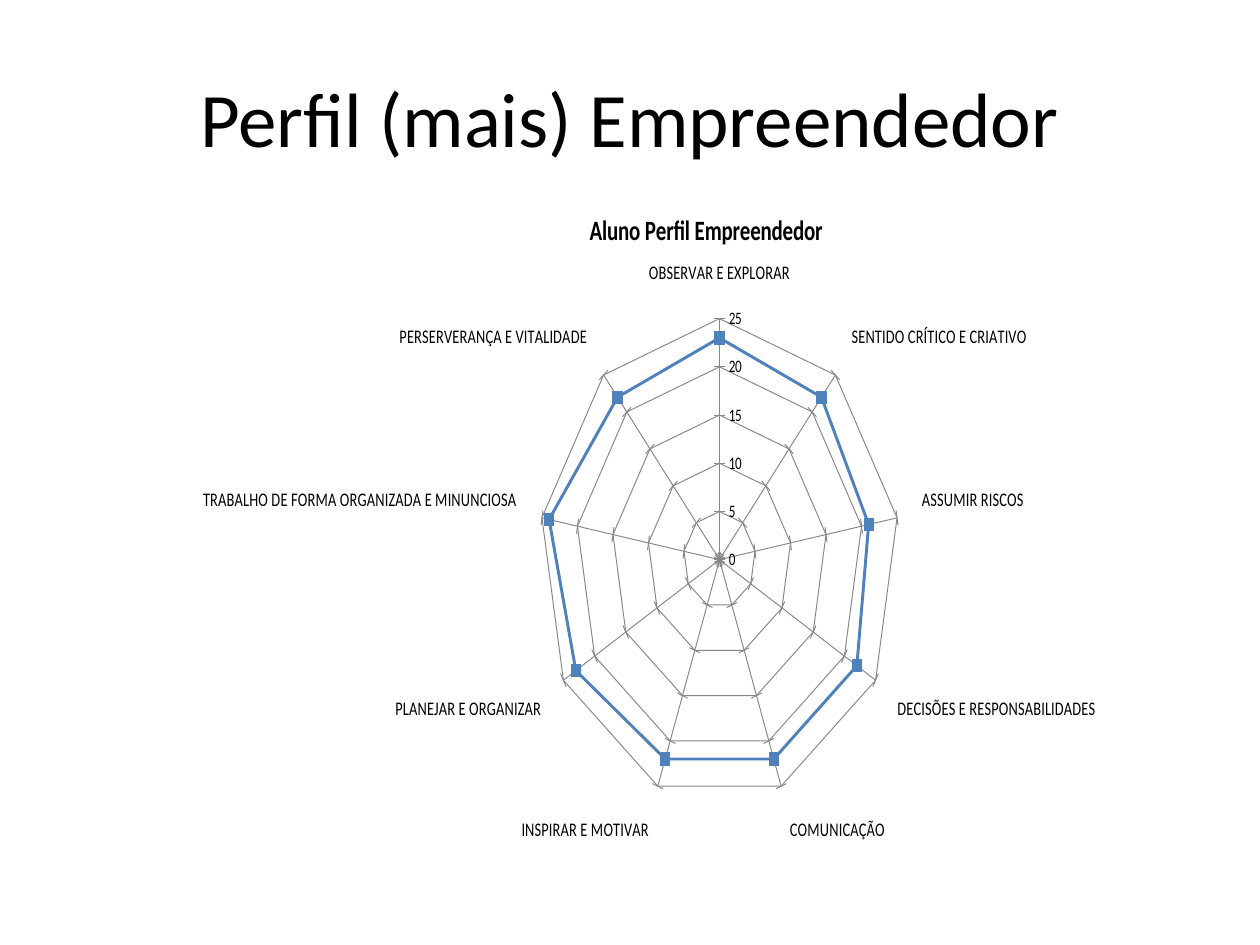
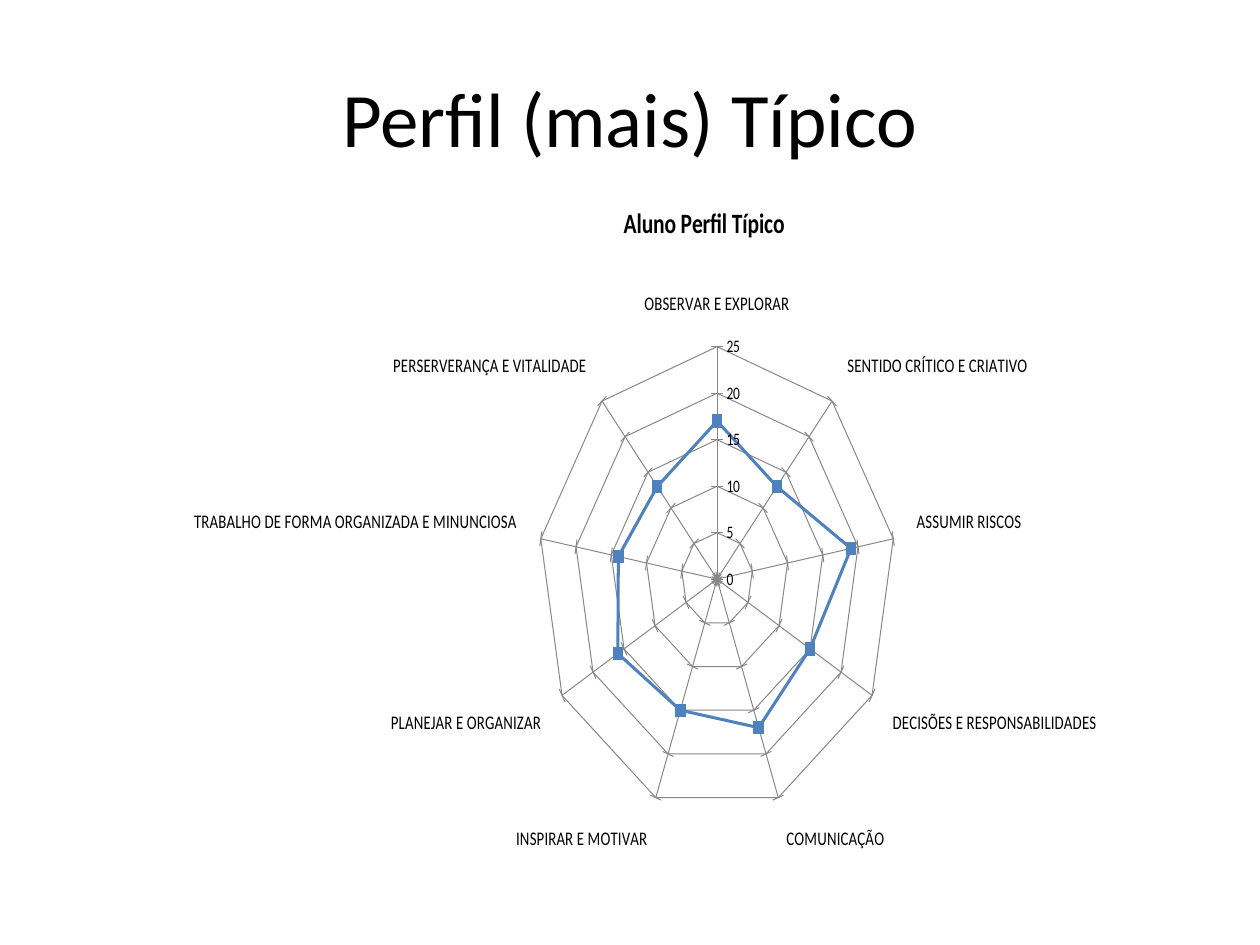
from dataclasses import dataclass

from lxml import etree
from pptx import Presentation
from pptx.chart.chart import Chart
from pptx.chart.data import CategoryChartData
from pptx.dml.color import RGBColor
from pptx.enum.chart import XL_CHART_TYPE, XL_MARKER_STYLE, XL_TICK_MARK
from pptx.enum.text import MSO_ANCHOR, PP_ALIGN
from pptx.oxml.ns import qn
from pptx.slide import Slide
from pptx.util import Emu, Pt

RADAR = XL_CHART_TYPE.RADAR_MARKERS
SQUARE = XL_MARKER_STYLE.SQUARE
CROSS = XL_TICK_MARK.CROSS
MIDDLE = MSO_ANCHOR.MIDDLE
CENTER = PP_ALIGN.CENTER

# Shared look
PX_PER_INCH = 126
FONT = "Calibri"
COLORS = {"text": "000000", "grid": "878787", "profile": "4F81BD"}
TITLE_ONLY_LAYOUT = 5
TITLE_BOX = (63, 38, 1134, 158)
VALUE_SCALE = {
    "minimum_scale": 0,
    "maximum_scale": 25,
    "major_unit": 5,
    "major_tick_mark": CROSS,
    "has_major_gridlines": True,
}

SKILLS = (
    "OBSERVAR E EXPLORAR",
    "SENTIDO CRÍTICO E CRIATIVO",
    "ASSUMIR RISCOS",
    "DECISÕES E RESPONSABILIDADES",
    "COMUNICAÇÃO",
    "INSPIRAR E MOTIVAR",
    "PLANEJAR E ORGANIZAR",
    "TRABALHO DE FORMA ORGANIZADA E MINUNCIOSA",
    "PERSERVERANÇA E VITALIDADE",
)


@dataclass(frozen=True)
class Profile:
    heading: str
    student: str
    scores: tuple[int, ...]
    box: tuple[int, int, int, int]
    plot: dict[str, float]
    caption: dict[str, float]


PROFILES = (
    Profile(
        "Perfil (mais) Empreendedor",
        "Aluno Perfil Empreendedor",
        (23, 22, 21, 22, 22, 22, 23, 24, 22),
        (203, 185, 893, 714),
        {"x": 0.25, "y": 0.17, "w": 0.54, "h": 0.71},
        {},
    ),
    Profile(
        "Perfil (mais) Típico",
        "Aluno Perfil Típico",
        (17, 13, 19, 15, 17, 15, 16, 14, 13),
        (194, 185, 903, 674),
        {"x": 0.21, "y": 0.24, "w": 0.52, "h": 0.69},
        {"x": 0.33, "y": 0.02},
    ),
)


def px(length: int) -> Emu:
    return Emu(round(length * 914400 / PX_PER_INCH))


def color(name: str) -> RGBColor:
    return RGBColor.from_string(COLORS[name])


def style_font(font, size: int, bold: bool = False) -> None:
    for attribute, value in {"name": FONT, "size": Pt(size), "bold": bold}.items():
        setattr(font, attribute, value)
    font.color.rgb = color("text")


def style_line(line, name: str, width: float) -> None:
    line.color.rgb = color(name)
    line.width = Pt(width)


def set_layout(layout, fractions: dict[str, float], inner: bool = False) -> None:
    """Pin a chart part to fractions of the chart area."""
    for child in list(layout):
        layout.remove(child)
    settings = {"layoutTarget": "inner"} if inner else {}
    settings |= {"xMode": "edge", "yMode": "edge"}
    settings |= {key: str(value) for key, value in fractions.items()}
    manual = etree.SubElement(layout, qn("c:manualLayout"))
    for tag, value in settings.items():
        etree.SubElement(manual, qn(f"c:{tag}")).set("val", value)


def get_layout(parent, position: int):
    layout = parent.find(qn("c:layout"))
    if layout is None:
        layout = etree.Element(qn("c:layout"))
        parent.insert(position, layout)
    return layout


def add_heading(slide: Slide, text: str) -> None:
    heading = slide.shapes.title
    heading.left, heading.top, heading.width, heading.height = map(px, TITLE_BOX)
    frame = heading.text_frame
    frame.text = text
    frame.vertical_anchor = MIDDLE
    frame.paragraphs[0].alignment = CENTER
    style_font(frame.paragraphs[0].runs[0].font, 44)


def style_axes(chart: Chart) -> None:
    skill_axis, score_axis = chart.category_axis, chart.value_axis
    for attribute, value in VALUE_SCALE.items():
        setattr(score_axis, attribute, value)
    score_axis.tick_labels.number_format = "0"
    score_axis.tick_labels.number_format_is_linked = False
    skill_axis.has_major_gridlines = True
    for axis, size in ((skill_axis, 11), (score_axis, 10)):
        style_font(axis.tick_labels.font, size)
        style_line(axis.format.line, "grid", 0.75)
        style_line(axis.major_gridlines.format.line, "grid", 0.75)


def add_radar(slide: Slide, profile: Profile) -> None:
    data = CategoryChartData(number_format="0")
    data.categories = SKILLS
    data.add_series(profile.student, profile.scores)
    chart = slide.shapes.add_chart(RADAR, *map(px, profile.box), data).chart
    style_font(chart.font, 10)
    chart.has_legend = False
    chart.plots[0].vary_by_categories = False
    style_axes(chart)

    # Caption above the web
    chart.has_title = True
    caption = chart.chart_title
    caption.include_in_layout = False
    caption.text_frame.text = profile.student
    style_font(caption.text_frame.paragraphs[0].runs[0].font, 16, bold=True)

    # Score outline and its markers
    scores = chart.plots[0].series[0]
    style_line(scores.format.line, "profile", 2.25)
    marker = scores.marker
    marker.style, marker.size = SQUARE, 7
    marker.format.fill.solid()
    marker.format.fill.fore_color.rgb = color("profile")
    style_line(marker.format.line, "profile", 0.75)

    # Placement inside the chart area
    plot_area = chart.element.find(".//" + qn("c:plotArea"))
    set_layout(get_layout(plot_area, 0), profile.plot, inner=True)
    if profile.caption:
        caption_element = chart.element.find(".//" + qn("c:title"))
        set_layout(get_layout(caption_element, 1), profile.caption)


def main() -> None:
    deck = Presentation()
    deck.slide_width, deck.slide_height = px(1260), px(945)
    for profile in PROFILES:
        slide = deck.slides.add_slide(deck.slide_layouts[TITLE_ONLY_LAYOUT])
        add_heading(slide, profile.heading)
        add_radar(slide, profile)
    deck.save("out.pptx")


if __name__ == "__main__":
    main()
